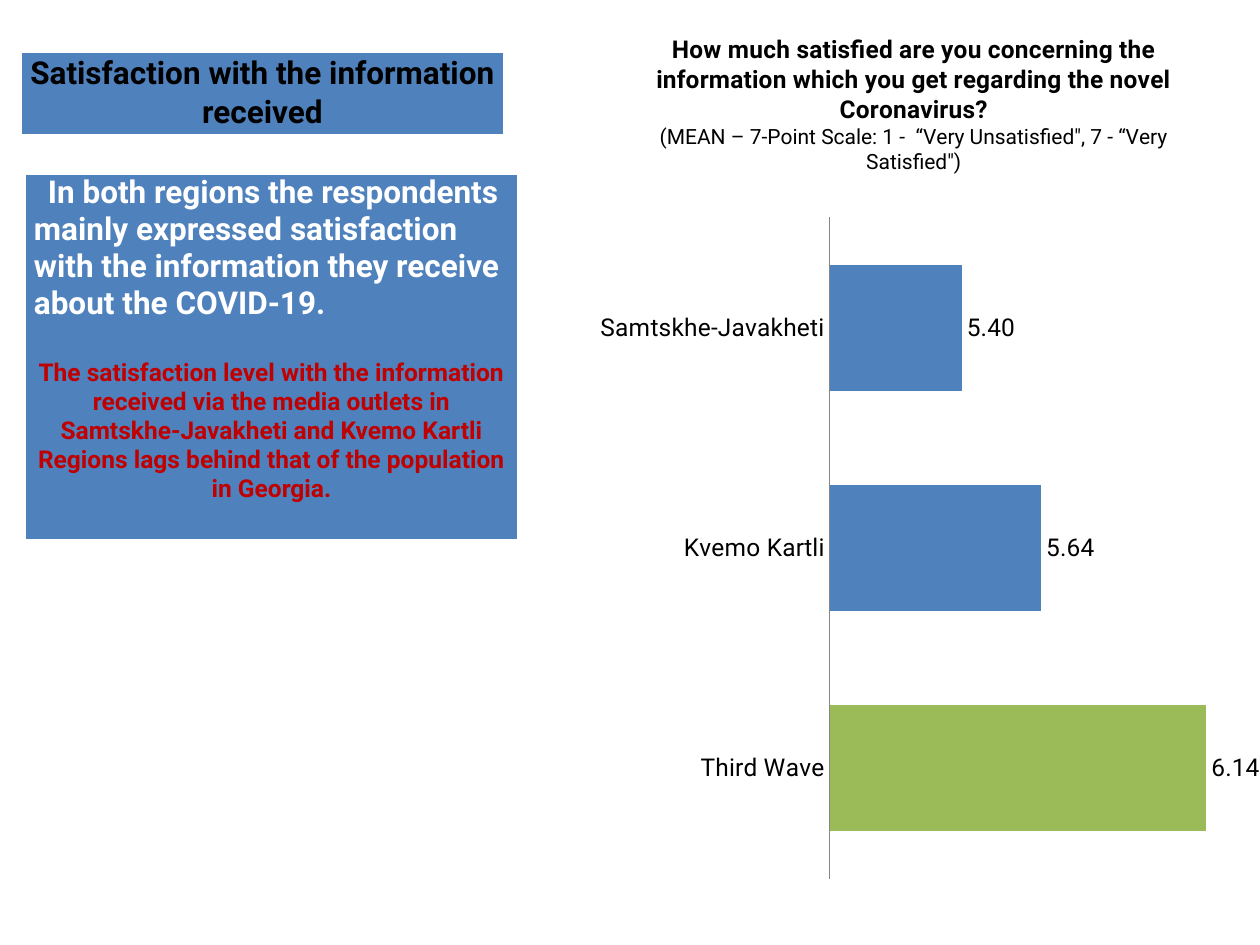
from lxml import etree
from pptx import Presentation
from pptx.chart.data import CategoryChartData
from pptx.dml.color import RGBColor
from pptx.enum.chart import XL_CHART_TYPE, XL_LABEL_POSITION, XL_TICK_MARK
from pptx.enum.text import PP_ALIGN
from pptx.oxml import parse_xml
from pptx.oxml.ns import nsdecls, qn
from pptx.util import Pt

BAR_CLUSTERED = XL_CHART_TYPE.BAR_CLUSTERED
OUTSIDE_END = XL_LABEL_POSITION.OUTSIDE_END
NO_TICK = XL_TICK_MARK.NONE
CENTER = PP_ALIGN.CENTER

FONT = "Roboto"
COLORS = {
    "blue": "4F81BD",
    "green": "9BBB59",
    "red": "C00000",
    "black": "000000",
    "white": "FFFFFF",
    "axis": "868686",
}
NUMBER_FORMAT = "###0.00"
SATISFACTION = {"Samtskhe-Javakheti": 5.40, "Kvemo Kartli": 5.64, "Third Wave": 6.14}


def rgb(name):
    return RGBColor.from_string(COLORS[name])


def style_font(font, size, color, bold=False):
    font.name = FONT
    font.size = Pt(size)
    font.bold = bold
    font.color.rgb = rgb(color)


def add_run(paragraph, text, size, color, bold=False):
    run = paragraph.add_run()
    run.text = text
    style_font(run.font, size, color, bold)


def set_layout(parent, **fractions):
    """Give a chart part a manual layout, in fractions of the chart."""
    layout = parent.find(qn("c:layout"))
    if layout is None:
        layout = etree.Element(qn("c:layout"))
        text = parent.find(qn("c:tx"))
        parent.insert(0 if text is None else 1, layout)
    for child in list(layout):
        layout.remove(child)
    manual = etree.SubElement(layout, qn("c:manualLayout"))
    if "w" in fractions:
        etree.SubElement(manual, qn("c:layoutTarget")).set("val", "inner")
    for side in ("x", "y"):
        etree.SubElement(manual, qn(f"c:{side}Mode")).set("val", "edge")
    for side, value in fractions.items():
        etree.SubElement(manual, qn(f"c:{side}")).set("val", str(value))


def add_box_table(slide, left, top, width, height):
    """One filled cell with white borders; returns its text frame."""
    table = slide.shapes.add_table(1, 1, Pt(left), Pt(top), Pt(width), Pt(height)).table
    table.first_row = table.horz_banding = False
    cell = table.cell(0, 0)
    cell.margin_left = cell.margin_right = Pt(5)
    cell.margin_top = cell.margin_bottom = 0
    cell.fill.solid()
    cell.fill.fore_color.rgb = rgb("blue")
    properties = cell._tc.get_or_add_tcPr()
    borders = {"lnL": 1, "lnR": 1, "lnT": 1, "lnB": 3}
    for position, (side, line_width) in enumerate(borders.items()):
        properties.insert(position, parse_xml(
            f'<a:{side} {nsdecls("a")} w="{Pt(line_width)}"><a:solidFill>'
            f'<a:srgbClr val="{COLORS["white"]}"/></a:solidFill></a:{side}>'))
    return cell.text_frame


def add_heading(slide, left, top, width, height):
    paragraph = add_box_table(slide, left, top, width, height).paragraphs[0]
    paragraph.alignment = CENTER
    paragraph.line_spacing = 1.07
    add_run(paragraph, "Satisfaction with the information received", 18, "black", True)


def add_findings(slide, left, top, width, height):
    text_frame = add_box_table(slide, left, top, width, height)
    summary = text_frame.paragraphs[0]
    summary._p.get_or_add_pPr().set("indent", str(Pt(8)))
    add_run(summary, "In both regions the respondents mainly expressed satisfaction "
            "with the information they receive about the COVID-19.", 18, "white", True)

    comparison = text_frame.add_paragraph()
    comparison.alignment = CENTER
    comparison.space_before = Pt(21)
    add_run(comparison, "The satisfaction level with the information received via the "
            "media outlets in Samtskhe-Javakheti and Kvemo Kartli Regions lags behind "
            "that of the population in Georgia.", 14, "red", True)


def add_satisfaction_chart(slide, left, top, width, height):
    data = CategoryChartData(number_format=NUMBER_FORMAT)
    data.categories = list(SATISFACTION)
    data.add_series("Series 1", list(SATISFACTION.values()))
    chart = slide.shapes.add_chart(
        BAR_CLUSTERED, Pt(left), Pt(top), Pt(width), Pt(height), data).chart
    chart.has_legend = False
    style_font(chart.font, 14, "black")

    # Question and scale
    title = chart.chart_title
    question = title.text_frame.paragraphs[0]
    add_run(question, "How much satisfied are you concerning the information which "
            "you get regarding the novel Coronavirus?", 14, "black", True)
    scale = title.text_frame.add_paragraph()
    add_run(scale, "(MEAN – 7-Point Scale: 1 -  “Very Unsatisfied\", "
            "7 - “Very Satisfied\")", 12, "black")
    title.include_in_layout = False
    set_layout(title._element, x=0.11, y=0.03)

    # Axes
    regions = chart.category_axis
    regions.reverse_order = True
    regions.major_tick_mark = regions.minor_tick_mark = NO_TICK
    regions.format.line.color.rgb = rgb("axis")
    means = chart.value_axis
    means.minimum_scale, means.maximum_scale = 5, 6.3
    means.has_major_gridlines = False
    means.visible = False

    # Bars and labels
    plot = chart.plots[0]
    plot.gap_width = 75
    plot.vary_by_categories = False
    set_layout(chart._chartSpace.chart.plotArea, x=0.37, y=0.23, w=0.63, h=0.7)
    series = plot.series[0]
    series.invert_if_negative = False
    for index, region in enumerate(SATISFACTION):
        fill = series.points[index].format.fill if region == "Third Wave" else series.format.fill
        fill.solid()
        fill.fore_color.rgb = rgb("green" if region == "Third Wave" else "blue")
    labels = series.data_labels
    labels.show_value = True
    labels.number_format = NUMBER_FORMAT
    labels.number_format_is_linked = False
    labels.position = OUTSIDE_END
    style_font(labels.font, 14, "black")


def main():
    presentation = Presentation()
    presentation.slide_width, presentation.slide_height = Pt(720), Pt(540)
    slide = presentation.slides.add_slide(presentation.slide_layouts[6])
    add_satisfaction_chart(slide, 330, 0, 390, 540)
    add_heading(slide, 12, 30, 276, 48)
    add_findings(slide, 14.4, 99.4, 281.5, 210)
    presentation.save("out.pptx")


if __name__ == "__main__":
    main()
